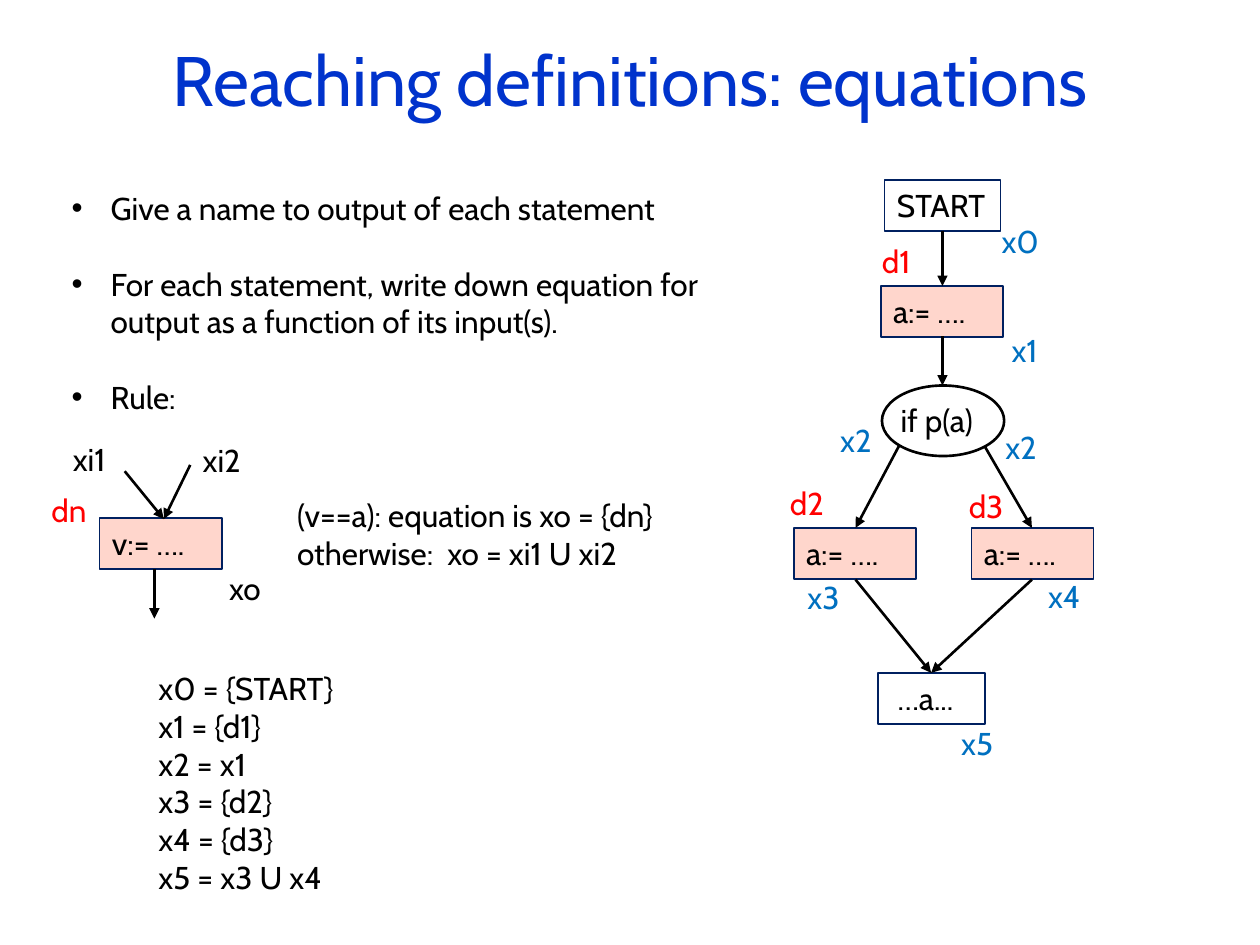
from dataclasses import dataclass
from lxml.etree import SubElement
from pptx import Presentation
from pptx.dml.color import RGBColor
from pptx.enum.shapes import MSO_CONNECTOR, MSO_SHAPE
from pptx.enum.text import MSO_ANCHOR, PP_ALIGN
from pptx.oxml.ns import qn
from pptx.util import Inches, Pt


@dataclass(frozen=True)
class Theme:
    """Font, sizes in points and colours."""
    font: str = "Cabin"
    head: int = 40
    body: int = 18
    gap: float = 21.6
    title: str = "0033CC"
    ink: str = "000000"
    edge: str = "002060"
    fill: str = "FF3300"
    alpha: int = 20000
    name: str = "FF0000"
    out: str = "0070C0"


class Board:
    """Draws on one slide; lengths are cells of a 100 by 75 grid."""

    def __init__(self, deck, theme):
        """Add a blank slide to the deck."""
        self.theme = theme
        self.cell = deck.slide_width / 100
        self.shapes = deck.slides.add_slide(deck.slide_layouts[6]).shapes

    def span(self, *cells):
        """Turn grid cells into lengths."""
        return [round(n * self.cell) for n in cells]

    def letter(self, shape, lines, color, size=None):
        """Set lines of text in a shape and return its frame."""
        frame = shape.text_frame
        frame.word_wrap = True
        frame.margin_right = 0
        frame.vertical_anchor = MSO_ANCHOR.TOP
        frame.text = "\n".join(lines)
        for para in frame.paragraphs:
            para.alignment = PP_ALIGN.LEFT
            para.font.name = self.theme.font
            para.font.size = Pt(size or self.theme.body)
            para.font.color.rgb = RGBColor.from_string(color)
        return frame

    def text(self, x, y, w, h, *lines, color=None):
        """Add a text box."""
        box = self.shapes.add_textbox(*self.span(x, y, w, h))
        return self.letter(box, lines, color or self.theme.ink)

    def label(self, x, y, word, color):
        """Add a one-word label."""
        self.text(x, y, 5.8, 4, word, color=color)

    def title(self, x, y, w, h, words):
        """Add the centred title."""
        box = self.shapes.add_textbox(*self.span(x, y, w, h))
        frame = self.letter(box, [words], self.theme.title, self.theme.head)
        frame.margin_right = frame.margin_left
        frame.vertical_anchor = MSO_ANCHOR.MIDDLE
        frame.paragraphs[0].alignment = PP_ALIGN.CENTER

    def bullets(self, x, y, w, h, *lines):
        """Add a bulleted list with a blank line's gap between items."""
        frame = self.text(x, y, w, h, *lines)
        for rank, para in enumerate(frame.paragraphs):
            if rank:
                para.space_before = Pt(self.theme.gap)
            props = para._p.get_or_add_pPr()
            props.set("marL", str(Inches(0.31)))
            props.set("indent", str(-Inches(0.31)))
            font = props.find(qn("a:defRPr"))
            for tag, key, value in (("a:buFont", "typeface", "Arial"),
                                    ("a:buChar", "char", "•")):
                font.addprevious(SubElement(props, qn(tag), {key: value}))

    def node(self, kind, x, y, w, h, color, width):
        """Add an unfilled outline shape."""
        shape = self.shapes.add_shape(kind, *self.span(x, y, w, h))
        shape.shadow.inherit = False
        shape.fill.background()
        shape.line.color.rgb = RGBColor.from_string(color)
        shape.line.width = Pt(width)
        return shape

    def box(self, x, y, w, words, tint=True):
        """Add a statement box, tinted when it defines a variable."""
        shape = self.node(MSO_SHAPE.RECTANGLE, x, y, w, 4.05, self.theme.edge, 1)
        if tint:
            shape.fill.solid()
            shape.fill.fore_color.rgb = RGBColor.from_string(self.theme.fill)
            tone = shape._element.spPr.find(qn("a:solidFill"))[0]
            SubElement(tone, qn("a:alpha"), val=str(self.theme.alpha))
        self.letter(shape, [words], self.theme.ink)

    def test(self, x, y, w, h, words):
        """Add a branch ellipse with its condition."""
        self.node(MSO_SHAPE.OVAL, x, y, w, h, self.theme.ink, 1.5)
        self.text(x + 0.5, y + 0.7, w, 4, words)

    def arrow(self, *ends):
        """Add an arrow from one point to another."""
        line = self.shapes.add_connector(MSO_CONNECTOR.STRAIGHT, *self.span(*ends))
        line.line.color.rgb = RGBColor.from_string(self.theme.ink)
        line.line.width = Pt(1.5)
        edge = line._element.spPr.find(qn("a:ln"))
        SubElement(edge, qn("a:tailEnd"), type="triangle")
        SubElement(line._element.spPr, qn("a:effectLst"))


def main():
    """Build the slide and save it."""
    deck = Presentation()
    deck.slide_width, deck.slide_height = Inches(10), Inches(7.5)
    theme = Theme()
    board = Board(deck, theme)

    board.title(7.5, 0, 85, 12.5, "Reaching definitions: equations")
    board.bullets(4.7, 14.5, 54.9, 19.2,
                  "Give a name to output of each statement",
                  "For each statement, write down equation for output "
                  "as a function of its input(s).",
                  "Rule:")
    board.text(22.6, 38.9, 43.5, 7, "(v==a): equation is xo = {dn}",
               "otherwise:  xo = xi1 U xi2")
    board.text(11.6, 52.6, 26.6, 19.2, "x0 = {START}", "x1 = {d1}", "x2 = x1",
               "x3 = {d2}", "x4 = {d3}", "x5 = x3 U x4")

    board.box(70.2, 14.3, 9.2, "START", tint=False)
    board.box(69.7, 53.4, 8.5, " …a...", tint=False)
    for x, y, words in ((69.9, 22.7, "a:= …."), (63, 41.9, "a:= …."),
                        (77.1, 41.9, "a:= …."), (7.9, 41.1, "v:= ….")):
        board.box(x, y, 9.7, words)
    board.test(70, 30.6, 9.7, 5.6, "if p(a)")

    for ends in ((74.8, 18.3, 74.8, 22.7), (74.8, 26.7, 74.8, 30.6),
                 (71.4, 35.3, 67.9, 41.9), (78.2, 35.5, 81.9, 41.9),
                 (67.9, 46, 73.9, 53.4), (81.9, 46, 73.9, 53.4),
                 (9.9, 37.4, 13, 41.2), (15.1, 36.9, 13, 41.2),
                 (12.25, 45.2, 12.25, 49.1)):
        board.arrow(*ends)

    labels = {
        theme.name: ((69, 18.7, "d1"), (61.7, 37.9, "d2"),
                     (75.9, 38.2, "d3"), (3.1, 38.5, "dn")),
        theme.out: ((78.5, 17.1, "x0"), (79.3, 25.8, "x1"), (65.7, 32.9, "x2"),
                    (78.8, 33.5, "x2"), (63.1, 45.4, "x3"), (82.2, 45.3, "x4"),
                    (75.3, 57, "x5")),
        theme.ink: ((4.8, 34.4, "xi1"), (15.1, 34.5, "xi2"), (17.2, 44.7, "xo")),
    }
    for color, group in labels.items():
        for x, y, word in group:
            board.label(x, y, word, color)
    deck.save("out.pptx")


if __name__ == "__main__":
    main()
